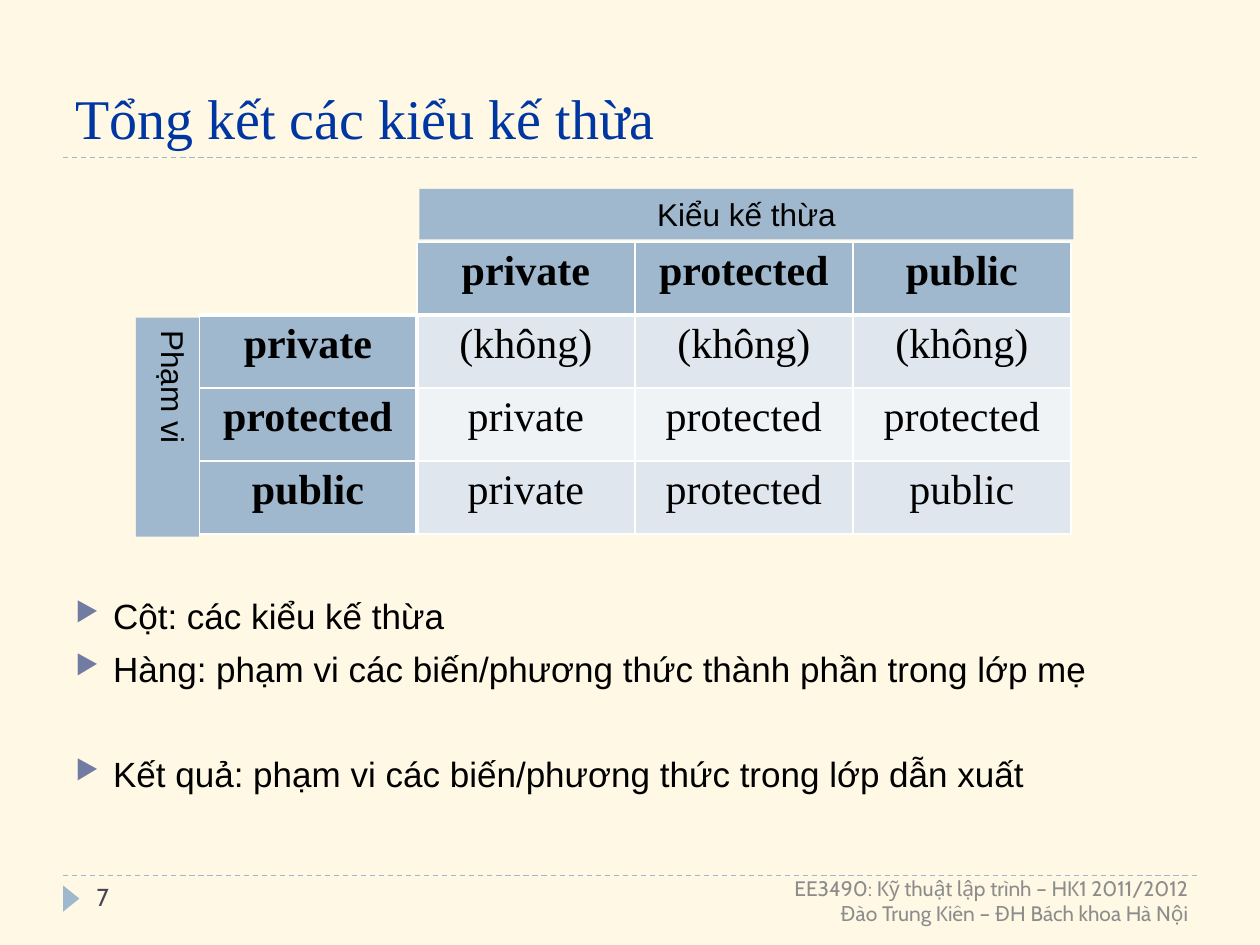
from lxml import etree
from pptx import Presentation
from pptx import util as u
from pptx.dml.color import RGBColor
from pptx.enum import dml, shapes, text
from pptx.oxml import parse_xml
from pptx.oxml.ns import nsdecls, qn

SERIF, SANS, LABEL = "Times New Roman", "Arial", "Cabin"
BLUE, BLACK, WHITE = "9FB8CD", "000000", "FFFFFF"
BANDS = ("DFE6ED", "F0F3F6")
KINDS = ("private", "protected", "public")
RESULTS = (
    ("(không)",) * 3,
    ("private", "protected", "protected"),
    ("private", "protected", "public"),
)


def color(value):
    return RGBColor.from_string(value)


def place(left, top, width, height):
    return [u.Cm(length) for length in (left, top, width, height)]


def style(para, name, size, ink, bold=False, **layout):
    formats = {"name": name, "size": u.Pt(size), "bold": bold}
    for key, value in formats.items():
        setattr(para.font, key, value)
    para.font.color.rgb = color(ink)
    for key, value in layout.items():
        setattr(para, key, value)


def write(frame, lines, *look, anchor=text.MSO_ANCHOR.TOP, **layout):
    frame.word_wrap = True
    frame.vertical_anchor = anchor
    for index, line in enumerate(lines):
        para = frame.paragraphs[0] if index == 0 else frame.add_paragraph()
        para.add_run().text = line
        style(para, *look, **layout)


def add_text(page, box, lines, *look, **layout):
    frame = page.shapes.add_textbox(*place(*box)).text_frame
    write(frame, lines, *look, **layout)


def add_block(page, kind, box):
    block = page.shapes.add_shape(kind, *place(*box))
    block.shadow.inherit = False
    block.fill.solid()
    block.fill.fore_color.rgb = color(BLUE)
    block.line.fill.background()
    return block


def add_rule(page, left, top, width):
    rule = page.shapes.add_connector(
        shapes.MSO_CONNECTOR.STRAIGHT, *place(left, top, left + width, top))
    rule.line.color.rgb = color(BLUE)
    rule.line.width = u.Pt(0.75)
    rule.line.dash_style = dml.MSO_LINE.DASH
    etree.SubElement(rule._element.spPr, qn("a:effectLst"))


def set_borders(cell, widths):
    """Draw white borders; widths maps L, R, T and B to points."""
    props = cell._tc.get_or_add_tcPr()
    sides = [side for side in "LRTB" if side in widths]
    for index, side in enumerate(sides):
        props.insert(index, parse_xml(
            f'<a:ln{side} {nsdecls("a")} w="{u.Pt(widths[side])}"><a:solidFill>'
            f'<a:srgbClr val="{WHITE}"/></a:solidFill></a:ln{side}>'))


def add_title(page, left, top, width, height):
    add_text(page, (left, top, width, height), ["Tổng kết các kiểu kế thừa"],
             SERIF, 32, "0036A2", anchor=text.MSO_ANCHOR.BOTTOM)
    add_rule(page, left, top + height, width)


def add_matrix(page, left, top, width, height):
    rows = [("",) + KINDS]
    rows += [(kind,) + values for kind, values in zip(KINDS, RESULTS)]
    size = len(rows)
    table = page.shapes.add_table(size, size, *place(left, top, width, height)).table
    table.first_row = table.horz_banding = False
    # Plain style without its own borders
    table._tbl.tblPr.find(qn("a:tableStyleId")).text = "{2D5ABB26-0587-4C30-8999-92F81FD0307C}"

    for row, values in enumerate(rows):
        for column, value in enumerate(values):
            cell = table.cell(row, column)
            heading = row == 0 or column == 0
            widths = {"L": 3 if row and column == 1 else 1,
                      "R": 3 if row and column == 0 else 1,
                      "T": 3 if row == 1 else 1,
                      "B": 3 if row == 0 else 1}
            if not value:
                cell.fill.background()
                set_borders(cell, {side: widths[side] for side in "RB"})
                continue
            cell.fill.solid()
            cell.fill.fore_color.rgb = color(BLUE if heading else BANDS[(row - 1) % 2])
            set_borders(cell, widths)
            write(cell.text_frame, [value], SERIF, 24, BLACK, heading,
                  alignment=text.PP_ALIGN.CENTER)

    # Labels above the columns and beside the rows
    cell_width, cell_height = width / size, height / size
    across = add_block(page, shapes.MSO_SHAPE.RECTANGLE,
                       (left + cell_width + 0.05, top - 1.07, width - cell_width, 1.02))
    write(across.text_frame, ["Kiểu kế thừa"], SANS, 18, BLACK,
          alignment=text.PP_ALIGN.CENTER)
    down = add_block(page, shapes.MSO_SHAPE.RECTANGLE,
                     (left - 1.27, top + cell_height + 0.05, 1.27, height - cell_height))
    down.text_frame._txBody.bodyPr.set("vert", "eaVert")
    write(down.text_frame, ["Phạm vi"], SANS, 18, BLACK, alignment=text.PP_ALIGN.LEFT)


def add_bullets(page, left, top, width, height):
    # Space before each line, in points; the result stands apart
    lines = {
        "Cột: các kiểu kế thừa": 0,
        "Hàng: phạm vi các biến/phương thức thành phần trong lớp mẹ": 6,
        "Kết quả: phạm vi các biến/phương thức trong lớp dẫn xuất": 36,
    }
    frame = page.shapes.add_textbox(*place(left, top, width, height)).text_frame
    frame.word_wrap = True
    for index, (line, space) in enumerate(lines.items()):
        para = frame.paragraphs[0] if index == 0 else frame.add_paragraph()
        para.add_run().text = line
        props = para._p.get_or_add_pPr()
        props.set("marL", str(u.Cm(0.76)))
        props.set("indent", str(-u.Cm(0.76)))
        for mark in ('<a:buClr {}><a:srgbClr val="727CA3"/></a:buClr>',
                     '<a:buSzPct {} val="76000"/>',
                     '<a:buChar {} char="▶"/>'):
            props.append(parse_xml(mark.format(nsdecls("a"))))
        style(para, SANS, 20, BLACK, space_before=u.Pt(space))


def add_footer(page, left, top, width, height):
    add_rule(page, left, top, width)
    pointer = add_block(page, shapes.MSO_SHAPE.ISOSCELES_TRIANGLE,
                        (left - 0.1, top + 0.3, 0.53, 0.33))
    pointer.rotation = 90
    add_text(page, (left + 0.43, top, 5.51, height), ["7"], LABEL, 14, "464653")
    add_text(page, (left + 7.42, top, 15.52, height),
             ["EE3490: Kỹ thuật lập trình – HK1 2011/2012",
              "Đào Trung Kiên – ĐH Bách khoa Hà Nội"],
             LABEL, 12, "8C8C8C", anchor=text.MSO_ANCHOR.MIDDLE,
             alignment=text.PP_ALIGN.RIGHT)


def main():
    deck = Presentation()
    deck.slide_width, deck.slide_height = u.Cm(25.4), u.Cm(19.05)
    page = deck.slides.add_slide(deck.slide_layouts[6])
    page.background.fill.solid()
    page.background.fill.fore_color.rgb = color("FEF8E4")

    margin, width = 1.27, 22.86
    add_title(page, margin, 0.43, width, 2.74)
    add_matrix(page, 4.01, 4.88, 17.58, 5.89)
    add_bullets(page, margin, 11.86, width, 5.26)
    add_footer(page, margin, 17.65, width, 1.02)
    deck.save("out.pptx")


if __name__ == "__main__":
    main()
